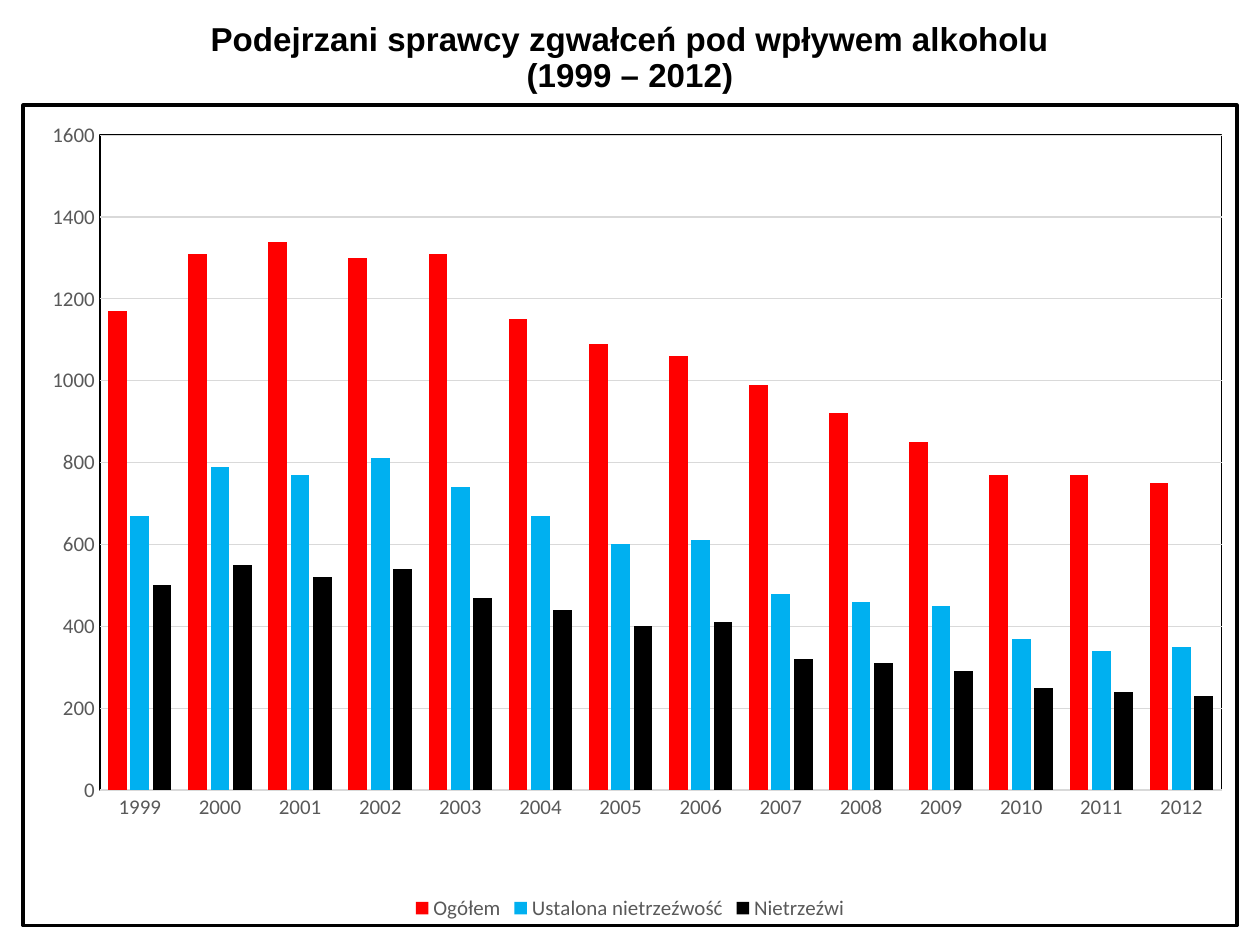
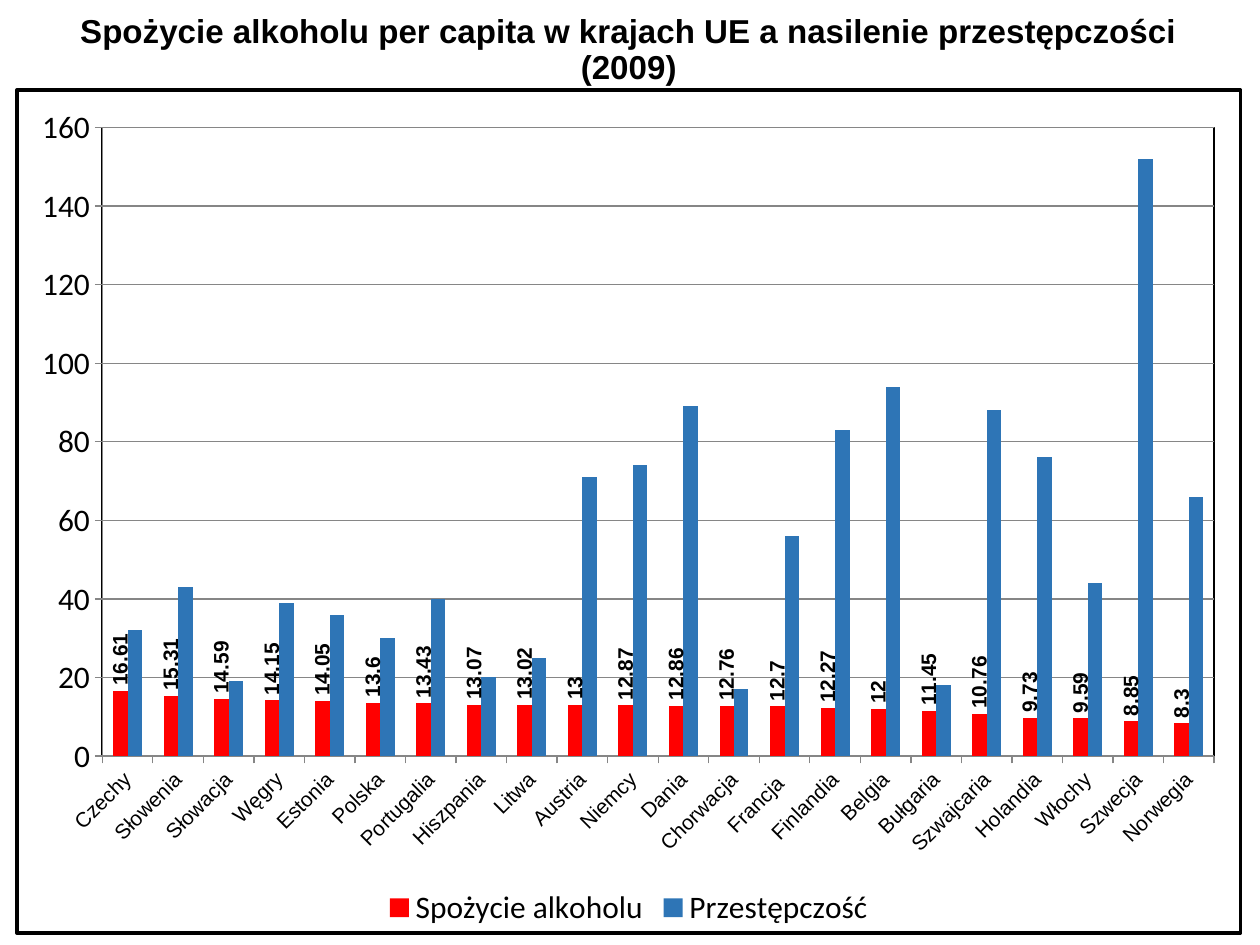
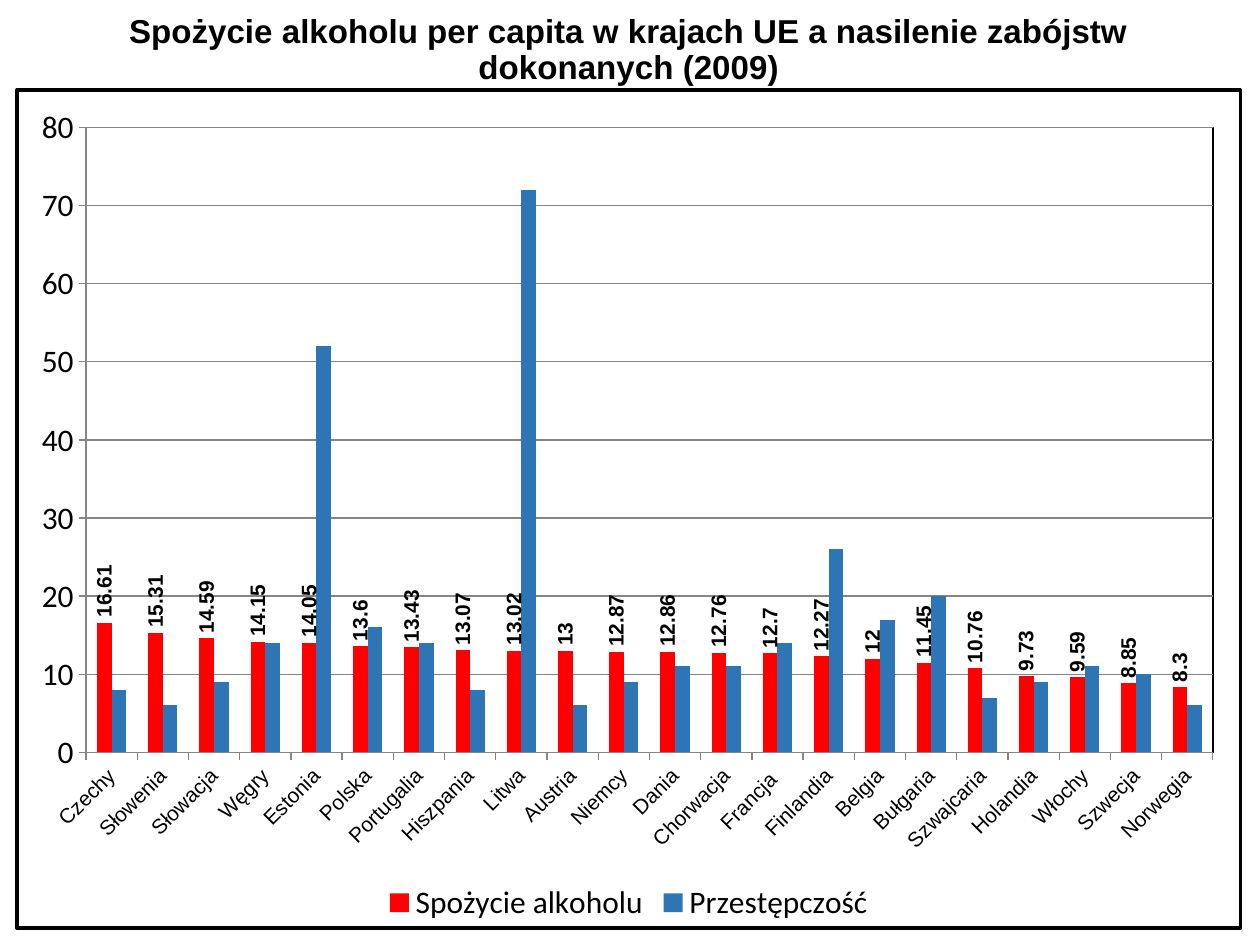
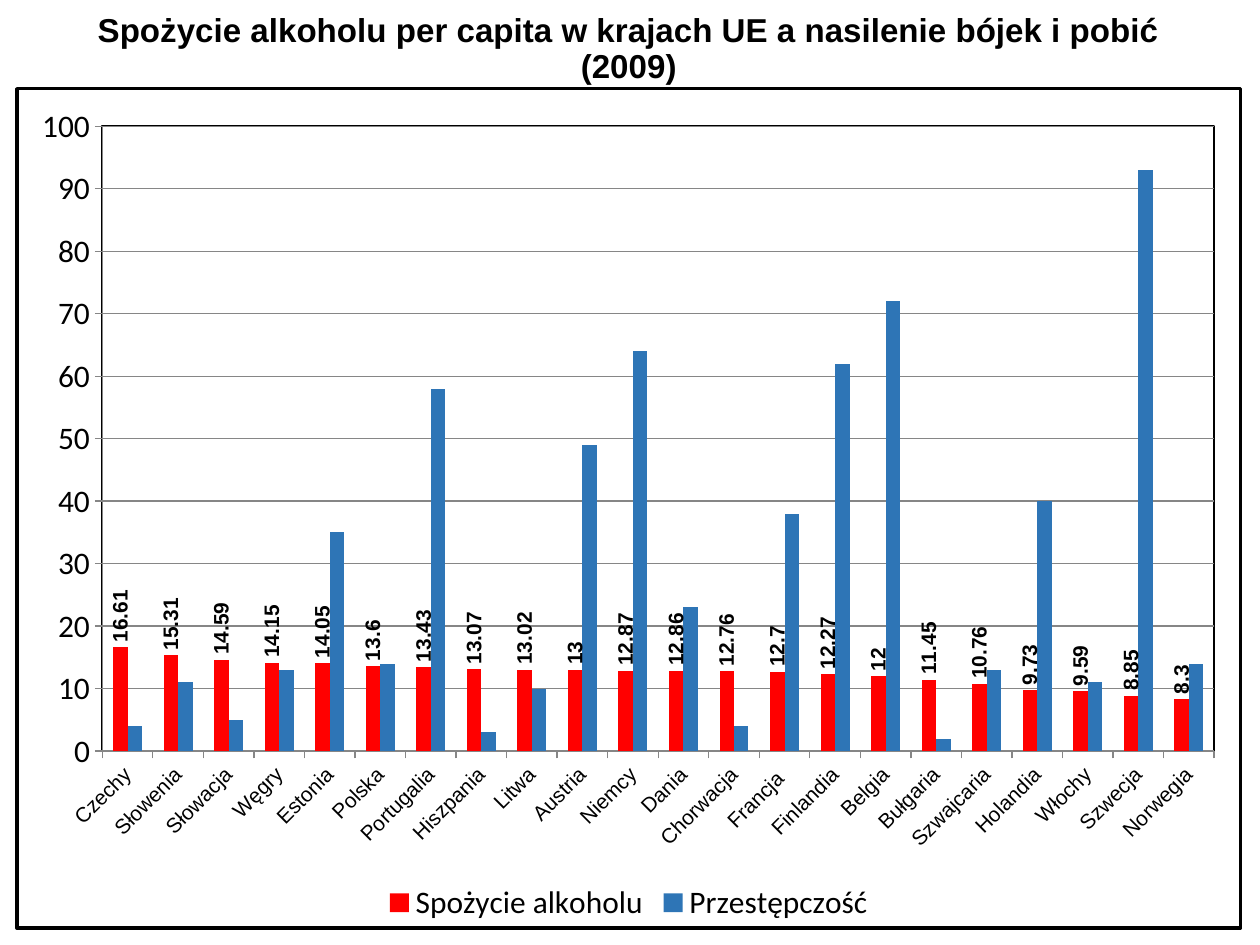
"""Build four slides on alcohol consumption and crime, one clustered column chart each."""
from dataclasses import dataclass
from typing import Any, NamedTuple

from pptx import Presentation
from pptx.chart.chart import Chart
from pptx.chart.data import CategoryChartData
from pptx.dml.color import RGBColor
from pptx.enum.chart import XL_CHART_TYPE, XL_LABEL_POSITION, XL_LEGEND_POSITION, XL_TICK_MARK
from pptx.enum.text import MSO_ANCHOR, PP_ALIGN
from pptx.oxml import parse_xml
from pptx.oxml.ns import nsdecls
from pptx.util import Emu, Pt

PX = 9144
COLUMNS = XL_CHART_TYPE.COLUMN_CLUSTERED
BOTTOM = XL_LEGEND_POSITION.BOTTOM
OUTSIDE_END = XL_LABEL_POSITION.OUTSIDE_END
TICK_NONE, TICK_OUT = XL_TICK_MARK.NONE, XL_TICK_MARK.OUTSIDE
MIDDLE, CENTER = MSO_ANCHOR.MIDDLE, PP_ALIGN.CENTER
SLANTED, UPRIGHT = -45, -90


@dataclass(frozen=True)
class Theme:
    """Colours, fonts and type sizes shared by all slides."""
    black: str = "000000"
    grey_text: str = "595959"
    pale_grid: str = "D9D9D9"
    grid: str = "868686"
    red: str = "FF0000"
    sky: str = "00B0F0"
    blue: str = "2E75B6"
    heading: str = "Arial"
    body: str = "Calibri"
    title_size: float = 18.9
    small: int = 12
    large: int = 18
    border: float = 2
    hairline: float = 0.75


class Box(NamedTuple):
    """Rectangle in px, a hundred to the inch."""
    x: int
    y: int
    w: int
    h: int


class Series(NamedTuple):
    """One run of columns."""
    name: str
    color: str
    values: tuple[float, ...]
    labelled: bool = False


@dataclass(frozen=True)
class ChartStyle:
    """Look of a chart's axes, text and columns."""
    size: int
    color: str
    category_font: str
    grid: str
    tick: Any
    gap: int
    overlap: int
    axis_line: bool
    slanted: bool


@dataclass(frozen=True)
class ChartSlide:
    """Content and places of one slide."""
    title: str
    title_box: Box
    frame: Box
    plot: Box
    top: int
    step: int
    categories: tuple[str, ...]
    series: tuple[Series, ...]
    style: ChartStyle


THEME = Theme()
YEARLY = ChartStyle(THEME.small, THEME.grey_text, THEME.body, THEME.pale_grid,
                    TICK_NONE, 90, -20, False, False)
BY_COUNTRY = ChartStyle(THEME.large, THEME.black, THEME.heading, THEME.grid,
                        TICK_OUT, 150, 0, True, True)

YEARS = tuple(str(year) for year in range(1999, 2013))
COUNTRIES = ("Czechy", "Słowenia", "Słowacja", "Węgry", "Estonia", "Polska", "Portugalia",
             "Hiszpania", "Litwa", "Austria", "Niemcy", "Dania", "Chorwacja", "Francja ",
             "Finlandia", "Belgia", "Bułgaria", "Szwajcaria", "Holandia", "Włochy",
             "Szwecja", "Norwegia")
CONSUMPTION = Series("Spożycie alkoholu", THEME.red,
                     (16.61, 15.31, 14.59, 14.15, 14.05, 13.6, 13.43, 13.07, 13.02, 13, 12.87,
                      12.86, 12.76, 12.7, 12.27, 12, 11.45, 10.76, 9.73, 9.59, 8.85, 8.3), True)
SUSPECTS = (
    Series("Ogółem", THEME.red, (1170, 1310, 1340, 1300, 1310, 1150, 1090, 1060, 990, 920,
                                 850, 770, 770, 750)),
    Series("Ustalona nietrzeźwość", THEME.sky, (670, 790, 770, 810, 740, 670, 600, 610, 480,
                                                460, 450, 370, 340, 350)),
    Series("Nietrzeźwi", THEME.black, (500, 550, 520, 540, 470, 440, 400, 410, 320, 310,
                                       290, 250, 240, 230)),
)


def country_slide(subject: str, title_y: int, frame: Box, plot: Box, top: int, step: int,
                  crime: tuple[float, ...]) -> ChartSlide:
    """Describe a slide that sets consumption against one kind of crime."""
    return ChartSlide(f"Spożycie alkoholu per capita w krajach UE a nasilenie {subject} (2009)",
                      Box(39, title_y, 920, 61), frame, plot, top, step, COUNTRIES,
                      (CONSUMPTION, Series("Przestępczość", THEME.blue, crime)), BY_COUNTRY)


SLIDES = (
    ChartSlide("Podejrzani sprawcy zgwałceń pod wpływem alkoholu\v(1999 – 2012)",
               Box(69, 11, 862, 71), Box(17, 82, 966, 654), Box(78, 106, 893, 522),
               1600, 200, YEARS, SUSPECTS, YEARLY),
    country_slide("przestępczości", 10, Box(12, 70, 974, 672), Box(80, 100, 885, 501), 160, 20,
                  (32, 43, 19, 39, 36, 30, 40, 20, 25, 71, 74, 89, 17, 56, 83, 94, 18, 88,
                   76, 44, 152, 66)),
    country_slide("zabójstw dokonanych", 10, Box(12, 70, 974, 668), Box(67, 100, 897, 498), 80, 10,
                  (8, 6, 9, 14, 52, 16, 14, 8, 72, 6, 9, 11, 11, 14, 26, 17, 20, 7, 9, 11,
                   10, 6)),
    country_slide("bójek i pobić", 9, Box(12, 69, 974, 669), Box(80, 99, 885, 498), 100, 10,
                  (4, 11, 5, 13, 35, 14, 58, 3, 10, 49, 64, 23, 4, 38, 62, 72, 2, 13, 40,
                   11, 93, 14)),
)


def apply(target: Any, values: dict[str, Any]) -> None:
    """Set each named attribute on the target."""
    for name, value in values.items():
        setattr(target, name, value)


def emu(box: Box) -> tuple[Emu, ...]:
    """Turn a px box into EMU lengths."""
    return tuple(Emu(n * PX) for n in box)


def set_font(font: Any, name: str, size: float, color: str, bold: bool = False) -> None:
    """Format a font."""
    apply(font, {"name": name, "size": Pt(size), "bold": bold})
    font.color.rgb = RGBColor.from_string(color)


def set_line(line: Any, color: str) -> None:
    """Format a hairline."""
    line.color.rgb = RGBColor.from_string(color)
    line.width = Pt(THEME.hairline)


def outline(width: float) -> Any:
    """Make unfilled shape properties with a black outline."""
    return parse_xml(
        f'<c:spPr {nsdecls("c", "a")}><a:noFill/><a:ln w="{Pt(width)}"><a:solidFill>'
        f'<a:srgbClr val="{THEME.black}"/></a:solidFill></a:ln></c:spPr>')


def manual_layout(plot: Box, frame: Box) -> Any:
    """Make the inner plot layout as fractions of the frame."""
    parts = {"x": (plot.x - frame.x) / frame.w, "y": (plot.y - frame.y) / frame.h,
             "w": plot.w / frame.w, "h": plot.h / frame.h}
    modes = "".join(f'<c:{k}Mode val="edge"/>' for k in "xy")
    sizes = "".join(f'<c:{k} val="{v:.4f}"/>' for k, v in parts.items())
    return parse_xml(f'<c:layout {nsdecls("c")}><c:manualLayout><c:layoutTarget val="inner"/>'
                     f'{modes}{sizes}</c:manualLayout></c:layout>')


def rotate_text(chart: Chart, owner: str, degrees: int) -> None:
    """Turn the text of every matching chart part."""
    for body in chart.element.xpath(f".//{owner}/c:txPr/a:bodyPr"):
        body.set("rot", str(degrees * 60000))
        body.set("vert", "horz")


def add_title(s: Any, text: str, box: Box) -> None:
    """Add the centred bold title."""
    tf = s.shapes.add_textbox(*emu(box)).text_frame
    apply(tf, {"word_wrap": True, "vertical_anchor": MIDDLE})
    p = tf.paragraphs[0]
    p.text = text
    apply(p, {"alignment": CENTER, "line_spacing": 0.9})
    for r in p.runs:
        set_font(r.font, THEME.heading, THEME.title_size, THEME.black, True)


def format_axes(chart: Chart, item: ChartSlide) -> None:
    """Format both axes and the gridlines."""
    style = item.style
    category, value = chart.category_axis, chart.value_axis
    for axis, name, size in ((category, style.category_font, THEME.small),
                             (value, THEME.body, style.size)):
        apply(axis, {"major_tick_mark": style.tick, "minor_tick_mark": TICK_NONE})
        set_font(axis.tick_labels.font, name, size, style.color)
        set_line(axis.format.line, style.grid)
    if not style.axis_line:
        value.format.line.fill.background()
    apply(value, {"minimum_scale": 0, "maximum_scale": item.top, "major_unit": item.step,
                  "has_major_gridlines": True})
    set_line(value.major_gridlines.format.line, style.grid)
    if style.slanted:
        rotate_text(chart, "c:catAx", SLANTED)


def format_series(chart: Chart, item: ChartSlide) -> None:
    """Colour the columns and label those that show values."""
    plot = chart.plots[0]
    apply(plot, {"gap_width": item.style.gap, "overlap": item.style.overlap,
                 "vary_by_categories": False})
    for series, columns in zip(item.series, plot.series):
        columns.format.fill.solid()
        columns.format.fill.fore_color.rgb = RGBColor.from_string(series.color)
        columns.invert_if_negative = False
        if series.labelled:
            labels = columns.data_labels
            apply(labels, {"show_value": True, "position": OUTSIDE_END,
                           "number_format": "General", "number_format_is_linked": False})
            set_font(labels.font, THEME.heading, THEME.small, THEME.black, True)
    rotate_text(chart, "c:dLbls", UPRIGHT)


def add_column_chart(s: Any, item: ChartSlide) -> None:
    """Add the framed column chart with its legend."""
    data = CategoryChartData()
    data.categories = item.categories
    for series in item.series:
        data.add_series(series.name, series.values)
    chart = s.shapes.add_chart(COLUMNS, *emu(item.frame), data).chart
    apply(chart, {"has_title": False, "has_legend": True})
    set_font(chart.font, THEME.body, item.style.size, THEME.black)
    apply(chart.legend, {"position": BOTTOM, "include_in_layout": False})
    set_font(chart.legend.font, THEME.body, item.style.size, item.style.color)
    format_axes(chart, item)
    format_series(chart, item)
    area = chart.element.xpath("c:chart/c:plotArea")[0]
    for layout in area.xpath("c:layout"):
        area.remove(layout)
    area.insert(0, manual_layout(item.plot, item.frame))
    area.append(outline(1))
    chart.element.xpath("c:chart")[0].addnext(outline(THEME.border))


def main() -> None:
    """Build and save the presentation."""
    prs = Presentation()
    apply(prs, {"slide_width": Emu(1000 * PX), "slide_height": Emu(750 * PX)})
    for item in SLIDES:
        s = prs.slides.add_slide(prs.slide_layouts[6])
        add_title(s, item.title, item.title_box)
        add_column_chart(s, item)
    prs.save("out.pptx")


if __name__ == "__main__":
    main()
